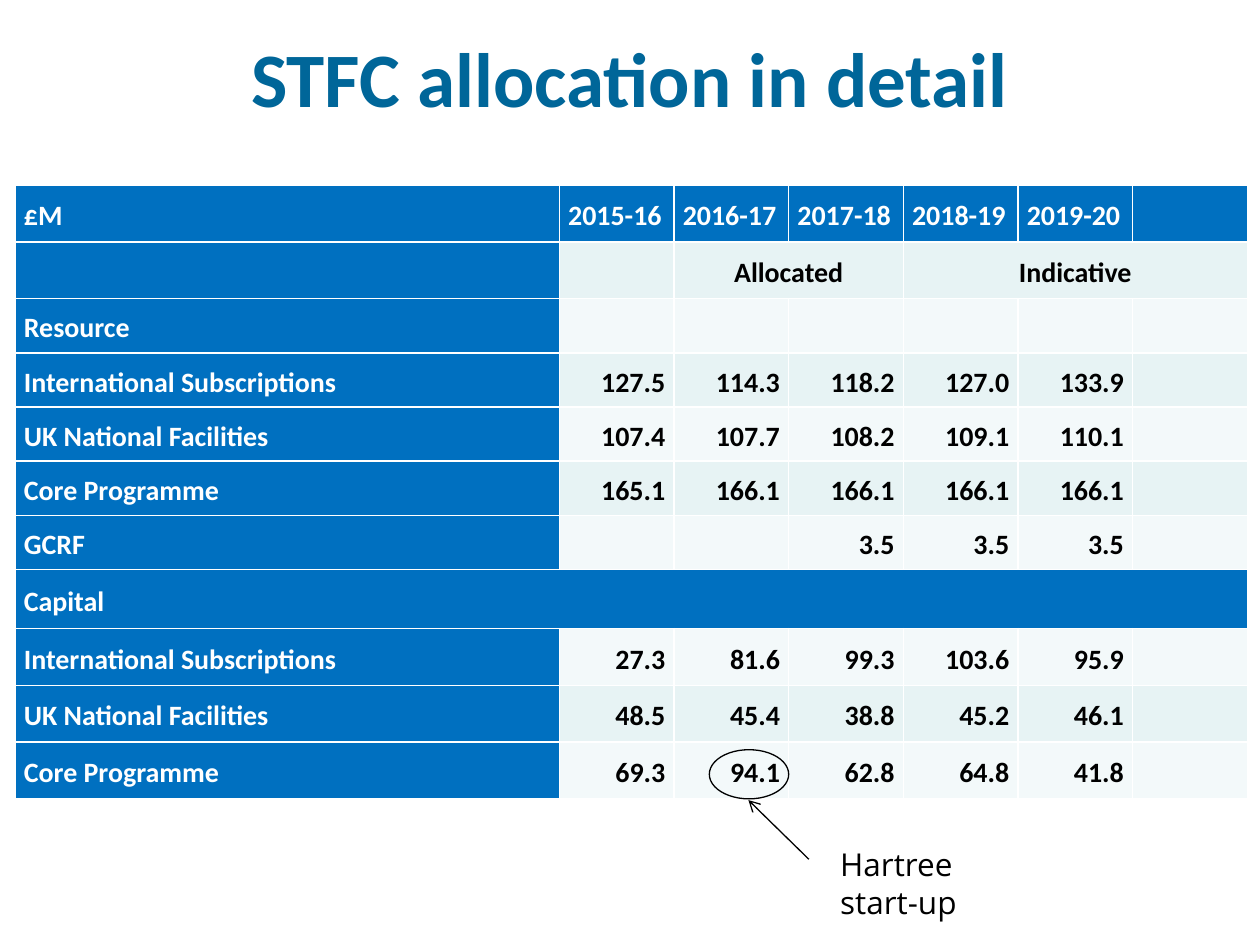
import pptx
import pptx.util
import pptx.dml.color
import pptx.enum.shapes
import pptx.enum.text
import pptx.oxml
import pptx.oxml.ns
from dataclasses import dataclass

Inches, Pt = pptx.util.Inches, pptx.util.Pt
ALIGN = pptx.enum.text.PP_ALIGN
ANCHOR = pptx.enum.text.MSO_ANCHOR

# Content
TITLE = "STFC allocation in detail"
NOTE = "Hartree start-up"
HEADER = ["£M", "2015-16", "2016-17", "2017-18", "2018-19", "2019-20"]
ROWS = [
    HEADER,
    ["", "", "Allocated", "", "Indicative"],
    ["Resource"],
    ["International Subscriptions", "127.5", "114.3", "118.2", "127.0", "133.9"],
    ["UK National Facilities", "107.4", "107.7", "108.2", "109.1", "110.1"],
    ["Core Programme", "165.1", "166.1", "166.1", "166.1", "166.1"],
    ["GCRF", "", "", "3.5", "3.5", "3.5"],
    ["Capital"],
    ["International Subscriptions", "27.3", "81.6", "99.3", "103.6", "95.9"],
    ["UK National Facilities", "48.5", "45.4", "38.8", "45.2", "46.1"],
    ["Core Programme", "69.3", "94.1", "62.8", "64.8", "41.8"],
]
PERIOD_ROW, CAPITAL_ROW = 1, 7
SPANS = [(PERIOD_ROW, 2, 3), (PERIOD_ROW, 4, 6), (CAPITAL_ROW, 0, 6)]  # row, first, last

# Grid, in inches
WIDTH, HEIGHT = 10, 7.5
LEFT, TOP = 0.12, 1.47
COL_WIDTHS = [4.32] + [0.91] * 6
ROW_HEIGHTS = [0.45] * 2 + [0.43] * 5 + [0.47] + [0.45] * 3


@dataclass
class Theme:
    blue: str = "0070C0"
    title: str = "006699"
    bands: tuple = ("F3F9FA", "E7F3F4")
    white: str = "FFFFFF"
    black: str = "000000"
    font: str = "Calibri"
    note_font: str = "Open Sans"
    title_size: int = 44
    table_size: int = 16
    note_size: int = 18
    line: float = 0.75


theme = Theme()


def rgb(value):
    return pptx.dml.color.RGBColor.from_string(value)


def write(tf, text, font, size, color, bold=False, align=ALIGN.LEFT):
    p = tf.paragraphs[0]
    p.text = text
    p.alignment = align
    p.font.name, p.font.size, p.font.bold = font, Pt(size), bold
    p.font.color.rgb = rgb(color)
    return p


def add_table(s):
    frame = s.shapes.add_table(len(ROWS), len(COL_WIDTHS), Inches(LEFT), Inches(TOP),
                               Inches(sum(COL_WIDTHS)), Inches(sum(ROW_HEIGHTS)))
    table = frame.table
    table.first_col = True
    for column, width in zip(table.columns, COL_WIDTHS):
        column.width = Inches(width)
    for row, height in zip(table.rows, ROW_HEIGHTS):
        row.height = Inches(height)
    for i, texts in enumerate(ROWS):
        for j in range(len(COL_WIDTHS)):
            cell = table.cell(i, j)
            dark = j == 0 or i in (0, CAPITAL_ROW)
            cell.fill.solid()
            cell.fill.fore_color.rgb = rgb(theme.blue if dark else theme.bands[i % 2])
            cell.vertical_anchor = ANCHOR.MIDDLE
            cell.margin_left = cell.margin_right = Inches(0.07)
            cell.margin_top = cell.margin_bottom = 0
            if dark:
                align = ALIGN.LEFT
            else:
                align = ALIGN.CENTER if i == PERIOD_ROW else ALIGN.RIGHT
            p = write(cell.text_frame, texts[j] if j < len(texts) else "", theme.font,
                      theme.table_size, theme.white if dark else theme.black, True, align)
            p.line_spacing = 1.15
    for i, first, last in SPANS:
        table.cell(i, first).merge(table.cell(i, last))


def add_title(s):
    sp = s.shapes.add_shape(pptx.enum.shapes.MSO_SHAPE.RECTANGLE,
                            0, Inches(-0.02), Inches(WIDTH), Inches(1.25))
    sp.shadow.inherit = False
    sp.fill.solid()
    sp.fill.fore_color.rgb = rgb(theme.white)
    sp.line.fill.background()
    sp.text_frame.vertical_anchor = ANCHOR.MIDDLE
    write(sp.text_frame, TITLE, theme.font, theme.title_size, theme.title, True, ALIGN.CENTER)


def add_callout(s):
    # Ring around the 2016-17 core programme value
    ring = s.shapes.add_shape(pptx.enum.shapes.MSO_SHAPE.OVAL, Inches(5.63), Inches(5.95),
                              Inches(0.63), Inches(0.39))
    ring.shadow.inherit = False
    ring.fill.background()
    # Arrow from the note to the ring
    arrow = s.shapes.add_connector(pptx.enum.shapes.MSO_CONNECTOR.STRAIGHT, Inches(6.42),
                                   Inches(6.82), Inches(5.94), Inches(6.35))
    for sp in (ring, arrow):
        sp.line.color.rgb = rgb(theme.black)
        sp.line.width = Pt(theme.line)
    ns = pptx.oxml.ns.nsdecls("a")
    arrow.line._get_or_add_ln().append(
        pptx.oxml.parse_xml(f'<a:tailEnd {ns} type="arrow"/>'))
    arrow._element.spPr.append(pptx.oxml.parse_xml(f"<a:effectLst {ns}/>"))
    # Note
    box = s.shapes.add_textbox(Inches(6.57), Inches(6.66), Inches(1.18), Inches(0.71))
    box.text_frame.word_wrap = True
    box.text_frame.auto_size = pptx.enum.text.MSO_AUTO_SIZE.SHAPE_TO_FIT_TEXT
    write(box.text_frame, NOTE, theme.note_font, theme.note_size, theme.black)


def main():
    prs = pptx.Presentation()
    prs.slide_width, prs.slide_height = Inches(WIDTH), Inches(HEIGHT)
    s = prs.slides.add_slide(prs.slide_layouts[6])
    add_table(s)
    add_title(s)
    add_callout(s)
    prs.save("out.pptx")


if __name__ == "__main__":
    main()
